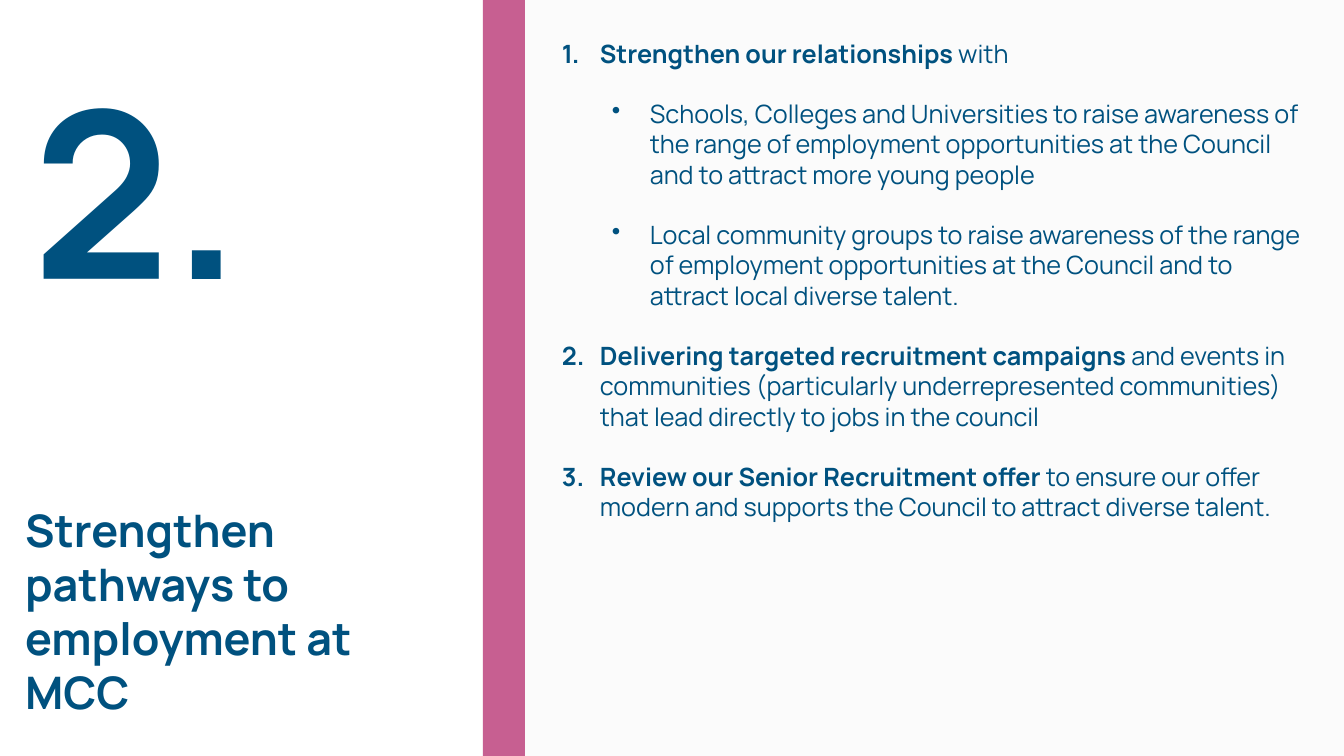
"""Build the section slide on strengthening pathways to employment."""
import pptx
import pptx.dml.color
import pptx.enum.shapes
import pptx.enum.text
import pptx.oxml.ns
import pptx.util
from lxml import etree

COLOURS = {"ink": "00517F", "panel": "FFFFFF", "band": "C75F91", "page": "FBFBFB"}

ACTIONS = [
    (0, [("Strengthen our relationships ", True), ("with", False)]),
    (1, [("Schools, Colleges and Universities to raise awareness of the range of employment "
          "opportunities at the Council and to attract more young people", False)]),
    (1, [("Local community groups to raise awareness of the range of employment "
          "opportunities at the Council and to attract local diverse talent.", False)]),
    (0, [("Delivering targeted recruitment campaigns ", True),
         ("and events in communities (particularly underrepresented communities) "
          "that lead directly to jobs in the council", False)]),
    (0, [("Review our Senior Recruitment offer ", True),
         ("to ensure our offer modern and supports the Council to attract "
          "diverse talent.", False)]),
]


class Deck:
    """Hold the style and the current slide."""

    def __init__(self, width, height):
        self.font = "Manrope"
        self.prs = pptx.Presentation()
        self.prs.slide_width, self.prs.slide_height = self.px(width), self.px(height)
        self.slide = self.prs.slides.add_slide(self.prs.slide_layouts[5])
        self.paint(self.slide.background.fill, "page")

    def px(self, n):
        return pptx.util.Emu(round(n * 914400 / 100.8))

    def rgb(self, name):
        return pptx.dml.color.RGBColor.from_string(COLOURS[name])

    def paint(self, fill, name):
        fill.solid()
        fill.fore_color.rgb = self.rgb(name)

    def style(self, p, size, bold=None):
        p.font.name, p.font.size, p.font.bold = self.font, pptx.util.Pt(size), bold
        p.font.color.rgb = self.rgb("ink")
        p.alignment = pptx.enum.text.PP_ALIGN.LEFT

    def indent(self, p, left, first=0):
        pPr = p._p.get_or_add_pPr()
        pPr.set("marL", str(self.px(left)))
        pPr.set("indent", str(self.px(first)))
        return pPr

    def frame(self, sp):
        tf = sp.text_frame
        tf.word_wrap = True
        tf.auto_size = pptx.enum.text.MSO_AUTO_SIZE.NONE
        tf.vertical_anchor = pptx.enum.text.MSO_ANCHOR.TOP
        return tf

    def rect(self, x, y, w, h, colour):
        sp = self.slide.shapes.add_shape(
            pptx.enum.shapes.MSO_SHAPE.RECTANGLE, *map(self.px, (x, y, w, h)))
        sp.shadow.inherit = False
        self.paint(sp.fill, colour)
        sp.line.fill.background()

    def box(self, x, y, w, h):
        return self.slide.shapes.add_textbox(*map(self.px, (x, y, w, h)))

    def heading(self, sp, text, size):
        p = self.frame(sp).paragraphs[0]
        p.text = text
        self.style(p, size, True)
        self.indent(p, 8)

    def title(self, x, y, w, h, text, size):
        sp = self.slide.shapes.title
        sp.left, sp.top, sp.width, sp.height = map(self.px, (x, y, w, h))
        self.slide.shapes._spTree.append(sp._element)
        self.heading(sp, text, size)

    def bullet(self, p, level):
        p.level = level
        pPr = self.indent(p, 38 + 50 * level, -38)
        tag, attrs = [("a:buAutoNum", {"type": "arabicPeriod"}),
                      ("a:buChar", {"char": "•"})][level]
        mark = etree.Element(pptx.oxml.ns.qn(tag), attrs)
        pPr.find(pptx.oxml.ns.qn("a:defRPr")).addprevious(mark)

    def outline(self, x, y, w, h, items, size, gap):
        tf = self.frame(self.box(x, y, w, h))
        for i, (level, runs) in enumerate(items):
            p = tf.add_paragraph() if i else tf.paragraphs[0]
            for text, bold in runs:
                r = p.add_run()
                r.text, r.font.bold = text, bold
            self.style(p, size)
            self.bullet(p, level)
            p.space_before = pptx.util.Pt(gap if i else 0)


def main():
    deck = Deck(1344, 756)
    deck.rect(0, 0, 483, 756, "panel")
    deck.title(7, 498, 467, 228, "Strengthen pathways to employment at MCC", 32)
    deck.outline(552, 33, 759, 559, ACTIONS, 18, 21.6)
    deck.rect(483, 0, 42, 756, "band")
    deck.heading(deck.box(15, 42, 275, 291), "2.", 166)
    deck.prs.save("out.pptx")


if __name__ == "__main__":
    main()
